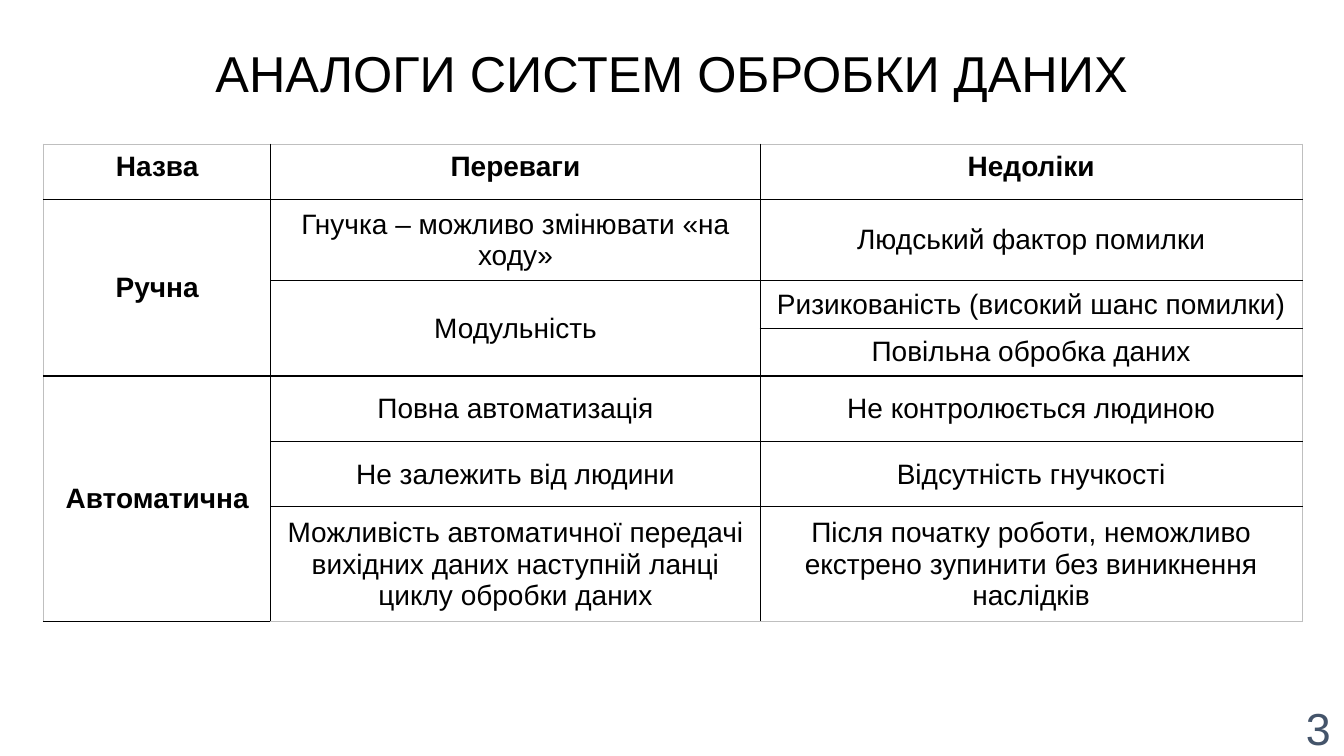
from lxml import etree
from pptx import Presentation
from pptx.dml.color import RGBColor
from pptx.enum.text import MSO_ANCHOR, PP_ALIGN
from pptx.oxml.ns import qn
from pptx.util import Pt

TOP, MIDDLE = MSO_ANCHOR.TOP, MSO_ANCHOR.MIDDLE
CENTER, RIGHT = PP_ALIGN.CENTER, PP_ALIGN.RIGHT

COLUMNS = [162.5, 349.5, 387.2]
ROWS = [39.5, 58, 33.5, 33.5, 47, 46.5, 82]
CELLS = [
    ["Назва", "Переваги", "Недоліки"],
    ["Ручна", "Гнучка – можливо змінювати «на ходу»", "Людський фактор помилки"],
    ["", "Модульність", "Ризикованість (високий шанс помилки)"],
    ["", "", "Повільна обробка даних"],
    ["Автоматична", "Повна автоматизація", "Не контролюється людиною"],
    ["", "Не залежить від людини", "Відсутність гнучкості"],
    ["", "Можливість автоматичної передачі вихідних даних наступній ланці циклу обробки даних",
     "Після початку роботи, неможливо екстрено зупинити без виникнення наслідків"],
]
MERGES = [((1, 0), (3, 0)), ((2, 1), (3, 1)), ((4, 0), (6, 0))]


def rgb(value):
    return RGBColor.from_string(value)


class SlideBuilder:
    font = "Arial"
    ink = "000000"
    frame = "BFBFBF"
    inset_x = 9.4
    inset_y = 5

    def __init__(self, s):
        self.s = s

    def add_text(self, tf, text, size, color=ink, align=CENTER, bold=False):
        p = tf.paragraphs[0]
        p.alignment = align
        r = p.add_run()
        r.text = text
        for name, value in {"name": self.font, "size": Pt(size), "bold": bold}.items():
            setattr(r.font, name, value)
        r.font.color.rgb = rgb(color)

    def set_margins(self, target, x, y):
        margins = {"margin_left": x, "margin_right": x, "margin_top": y, "margin_bottom": y}
        for name, value in margins.items():
            setattr(target, name, Pt(value))

    def text(self, box, text, size, color=ink, align=CENTER, anchor=TOP, inset_y=inset_y):
        tf = self.s.shapes.add_textbox(*map(Pt, box)).text_frame
        tf.word_wrap = True
        tf.vertical_anchor = anchor
        self.set_margins(tf, self.inset_x, inset_y)
        self.add_text(tf, text, size, color, align)

    def borders(self, cell, outer):
        tc_pr = cell._tc.get_or_add_tcPr()
        for index, (side, is_outer) in enumerate(outer.items()):
            ln = etree.Element(qn("a:" + side), w=str(Pt(1)))
            fill = etree.SubElement(ln, qn("a:solidFill"))
            etree.SubElement(fill, qn("a:srgbClr"), val=self.frame if is_outer else self.ink)
            tc_pr.insert(index, ln)

    def table(self, left, top, columns, rows, cells, merges, size):
        box = map(Pt, (left, top, sum(columns), sum(rows)))
        table = self.s.shapes.add_table(len(rows), len(columns), *box).table
        table.first_row = table.horz_banding = False
        for column, width in zip(table.columns, columns):
            column.width = Pt(width)
        for row, height in zip(table.rows, rows):
            row.height = Pt(height)
        for start, end in merges:
            table.cell(*start).merge(table.cell(*end))
        for i, texts in enumerate(cells):
            for j, text in enumerate(texts):
                cell = table.cell(i, j)
                cell.fill.background()
                cell.vertical_anchor = MIDDLE if i else TOP
                self.set_margins(cell, self.inset_x, self.inset_y)
                self.borders(cell, {
                    "lnL": j == 0, "lnR": j == len(columns) - 1,
                    "lnT": i == 0, "lnB": i == len(rows) - 1,
                })
                if text:
                    self.add_text(cell.text_frame, text, size, bold=i == 0 or j == 0)


def main():
    prs = Presentation()
    prs.slide_width, prs.slide_height = Pt(960), Pt(540)
    builder = SlideBuilder(prs.slides.add_slide(prs.slide_layouts[6]))
    builder.text((902, 499, 58, 41), "3", 32, "44546A", RIGHT, MIDDLE, builder.inset_x)
    builder.text((44, 25, 872, 55), "АНАЛОГИ СИСТЕМ ОБРОБКИ ДАНИХ", 36)
    builder.table(31, 103, COLUMNS, ROWS, CELLS, MERGES, 20)
    prs.save("out.pptx")


if __name__ == "__main__":
    main()
